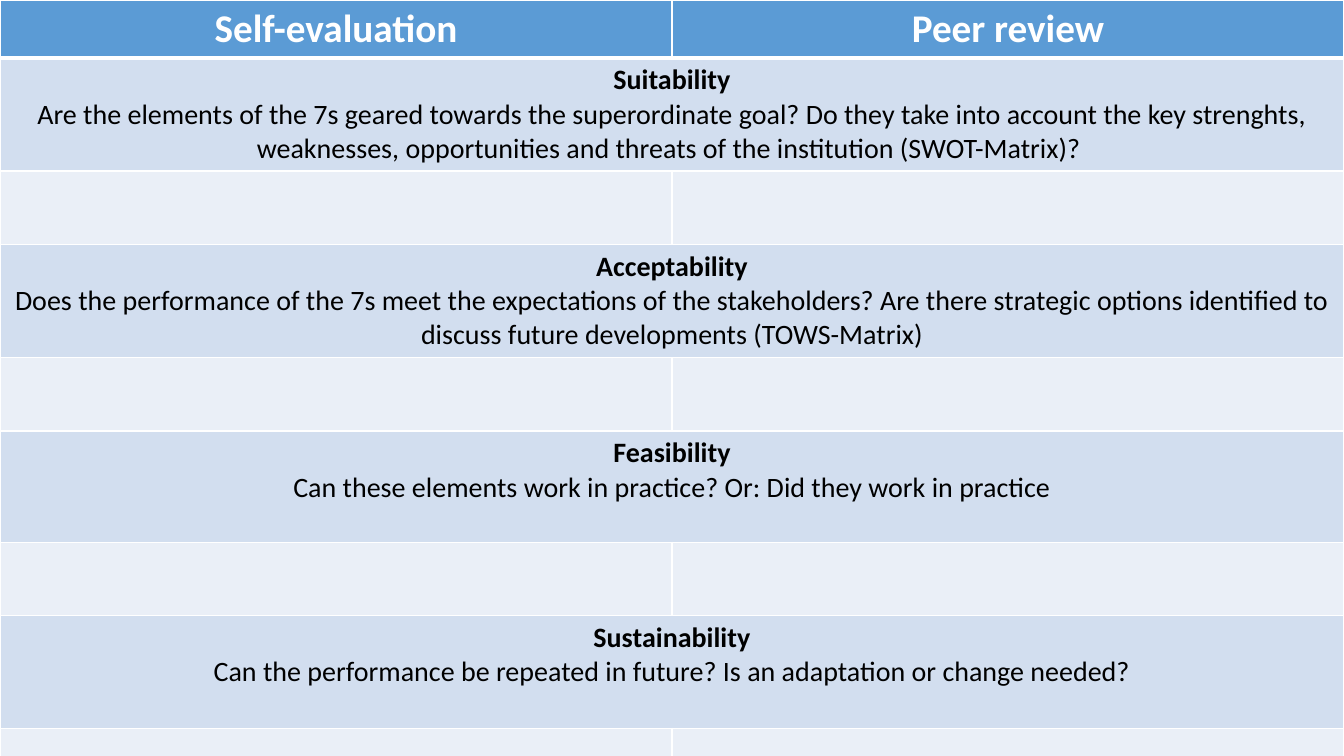
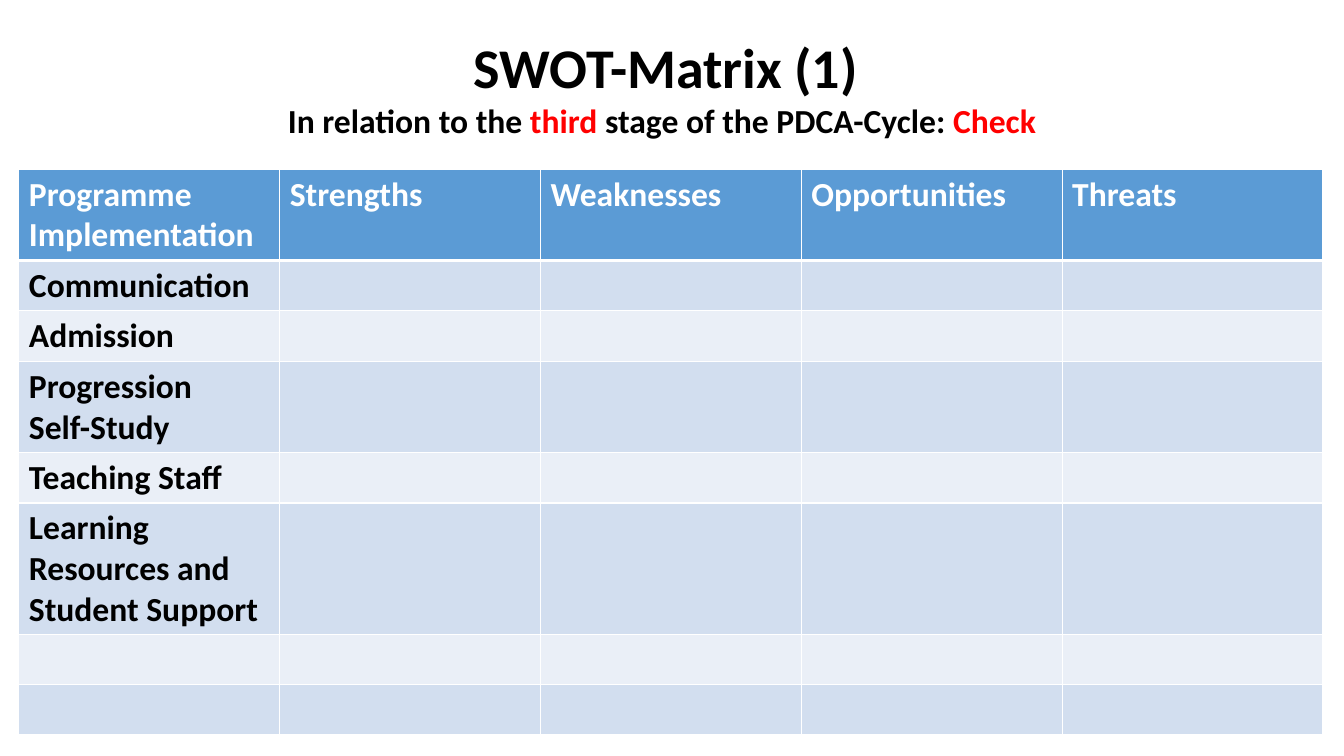
from lxml.etree import SubElement
from pptx import Presentation
from pptx.dml.color import RGBColor
from pptx.enum.text import MSO_AUTO_SIZE, PP_ALIGN
from pptx.oxml.ns import qn
from pptx.util import Emu, Pt

COLORS = {
    "head": "5B9BD5",
    "odd": "D2DEEF",
    "even": "EAEFF7",
    "white": "FFFFFF",
    "black": "000000",
    "red": "FF0000",
}
FONT = "Calibri"
SCALE = 9525


def px(count):
    """Turn whole pixels into EMU."""
    return Emu(count * SCALE)


def rgb(name):
    """Look up a named colour."""
    return RGBColor.from_string(COLORS[name])


class Deck:
    """Holds the shared style and the current slide."""

    def __init__(self, width, height):
        """Start an empty deck of the given size."""
        self.prs = Presentation()
        self.prs.slide_width = px(width)
        self.prs.slide_height = px(height)
        self.slide = None

    def page(self):
        """Add a blank slide and make it current."""
        self.slide = self.prs.slides.add_slide(self.prs.slide_layouts[6])

    def style(self, para, runs, size, color="black", bold=True, align=None):
        """Fill a paragraph with (text, colour) runs in one style."""
        para.alignment = align
        font = para.font
        font.name, font.size, font.bold = FONT, Pt(size), bold
        font.color.rgb = rgb(color)
        for text, tint in runs:
            run = para.add_run()
            run.text = text
            if tint:
                run.font.color.rgb = rgb(tint)

    def title(self, box, lines):
        """Add a centred title box of (runs, size) lines."""
        shape = self.slide.shapes.add_textbox(*map(px, box))
        frame = shape.text_frame
        frame.word_wrap = True
        frame.auto_size = MSO_AUTO_SIZE.SHAPE_TO_FIT_TEXT
        for index, (runs, size) in enumerate(lines):
            para = frame.add_paragraph() if index else frame.paragraphs[0]
            self.style(para, runs, size, align=PP_ALIGN.CENTER)

    def edge(self, cell, row):
        """Draw white cell borders, thicker below the header row."""
        sides = {"L": 1, "R": 1, "T": 3 if row == 1 else 1, "B": 1 if row else 3}
        props = cell._tc.get_or_add_tcPr()
        for side, width in sides.items():
            line = SubElement(props, qn(f"a:ln{side}"), w=str(Pt(width)))
            fill = SubElement(line, qn("a:solidFill"))
            SubElement(fill, qn("a:srgbClr"), val=COLORS["white"])

    def table(self, box, heights, rows, sizes, align=None, plain=False):
        """Add a banded table; a row with one entry spans all columns."""
        count = len(rows[0])
        shape = self.slide.shapes.add_table(len(rows), count, *map(px, box))
        grid = shape.table
        for col in grid.columns:
            col.width = px(box[2]) // count
        for row, (height, texts) in enumerate(zip(heights, rows)):
            grid.rows[row].height = px(height)
            if len(texts) == 1:
                grid.cell(row, 0).merge(grid.cell(row, count - 1))
            band = ("odd" if row % 2 else "even") if row else "head"
            for index, text in enumerate(texts):
                cell = grid.cell(row, index)
                self.edge(cell, row)
                cell.fill.solid()
                cell.fill.fore_color.rgb = rgb(band)
                self.label(cell, text, sizes[row > 0], row == 0, align, plain)

    def label(self, cell, text, size, head, align, plain):
        """Set the lines of one cell; plain keeps only the first bold."""
        frame = cell.text_frame
        color = "white" if head else "black"
        for index, line in enumerate(text.split("\n") if text else []):
            para = frame.add_paragraph() if index else frame.paragraphs[0]
            bold = not (plain and index)
            self.style(para, [(line, None)], size, color, bold, align)


def main():
    """Build both slides and save them."""
    deck = Deck(1280, 720)

    deck.page()
    tests = [
        "Suitability\nAre the elements of the 7s geared towards the superordinate "
        "goal? Do they take into account the key strenghts, weaknesses, "
        "opportunities and threats of the institution (SWOT-Matrix)? ",
        "Acceptability\nDoes the performance of the 7s meet the expectations of "
        "the stakeholders? Are there strategic options identified to discuss "
        "future developments (TOWS-Matrix)",
        "Feasibility\nCan these elements work in practice? "
        "Or: Did they work in practice",
        "Sustainability\nCan the performance be repeated in future? "
        "Is an adaptation or change needed?",
    ]
    rows = [["Self-evaluation", "Peer review"]]
    for test in tests:
        rows += [[test], ["", ""]]
    heights = [54] + [106, 70] * 3 + [107, 78]
    deck.table((0, 0, 1280, sum(heights)), heights, rows, (28, 20),
               PP_ALIGN.CENTER, plain=True)

    deck.page()
    deck.title((177, 26, 914, 113), [
        ([("SWOT-Matrix (1)", None)], 40),
        ([("In relation to the ", None), ("third ", "red"),
          ("stage of the PDCA-Cycle: ", None), ("Check ", "red")], 24),
    ])
    topics = ["Communication", "Admission", "Progression\nSelf-Study",
              "Teaching Staff", "Learning Resources and Student Support", "", ""]
    rows = [["Programme Implementation", "Strengths", "Weaknesses",
             "Opportunities", "Threats"]]
    rows += [[topic] + [""] * 4 for topic in topics]
    heights = [87, 48, 48, 87, 48, 125, 48, 48]
    deck.table((18, 161, 1242, sum(heights)), heights, rows, (24, 24))

    deck.prs.save("out.pptx")


if __name__ == "__main__":
    main()
